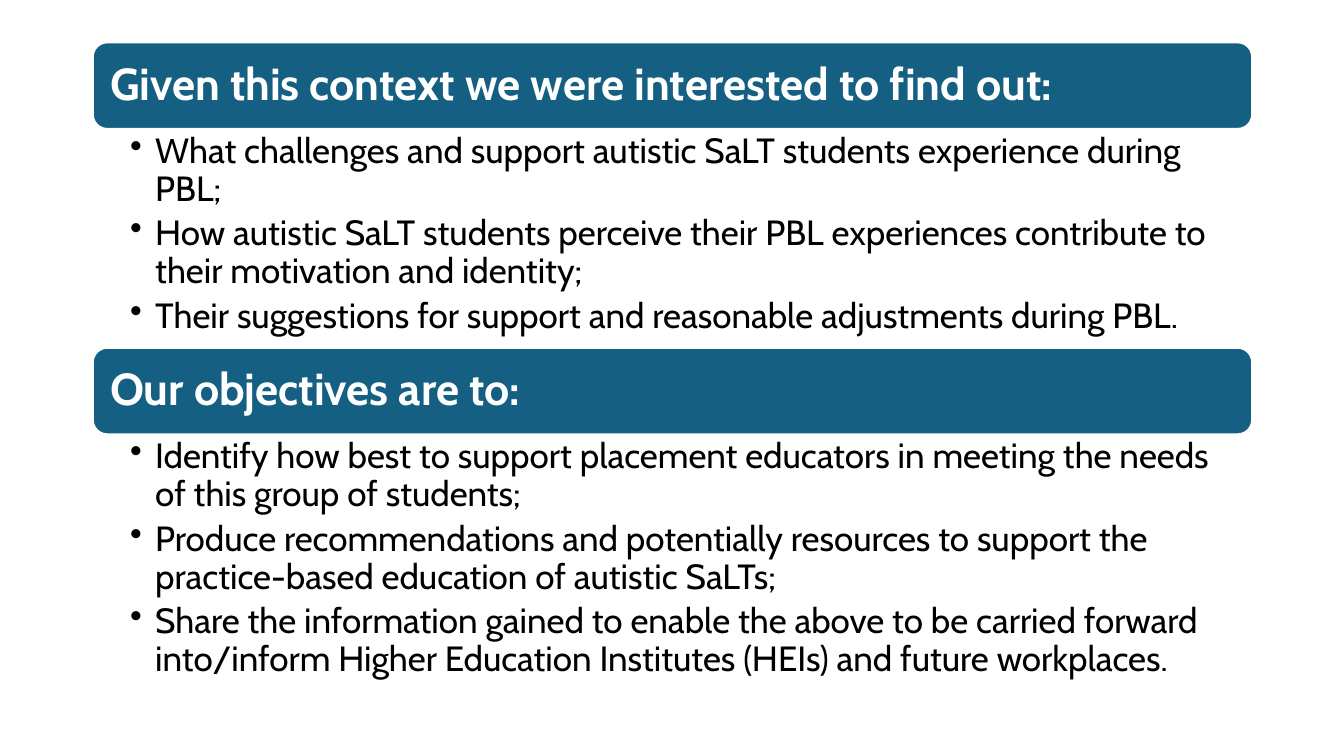
from pptx import Presentation
from pptx.dml.color import RGBColor
from pptx.enum import shapes, text
from pptx.oxml import ns
from pptx.util import Inches, Pt
from lxml import etree

LEFT, WIDTH, BAR = 0.92, 11.5, 0.86

# Heading, top of bar, height of list, list items
parts = [
    ("Given this context we were interested to find out:", 0.42, 2.17, [
        "What challenges and support autistic SaLT students experience during PBL;",
        "How autistic SaLT students perceive their PBL experiences contribute to "
        "their motivation and identity;",
        "Their suggestions for support and reasonable adjustments during PBL.",
    ]),
    ("Our objectives are to:", 3.45, 2.61, [
        "Identify how best to support placement educators in meeting the needs "
        "of this group of students;",
        "Produce recommendations and potentially resources to support the "
        "practice-based education of autistic SaLTs;",
        "Share the information gained to enable the above to be carried forward "
        "into/inform Higher Education Institutes (HEIs) and future workplaces.",
    ]),
]


def color(code):
    return RGBColor.from_string(code)


def write(para, words, size, code, bold=False):
    para.alignment = text.PP_ALIGN.LEFT
    para.line_spacing = 0.9
    run = para.add_run()
    run.text = words
    run.font.name = "Cabin"
    run.font.size = Pt(size)
    run.font.bold = bold
    run.font.color.rgb = color(code)


deck = Presentation()
deck.slide_width, deck.slide_height = Inches(13.33), Inches(7.5)
slide = deck.slides.add_slide(deck.slide_layouts[6])

for title, top, height, items in parts:
    # Heading bar
    bar = slide.shapes.add_shape(
        shapes.MSO_SHAPE.ROUNDED_RECTANGLE,
        Inches(LEFT), Inches(top), Inches(WIDTH), Inches(BAR))
    bar.shadow.inherit = False
    bar.fill.solid()
    bar.fill.fore_color.rgb = color("156082")
    bar.line.color.rgb = color("FFFFFF")
    bar.line.width = Pt(1.5)
    frame = bar.text_frame
    frame.word_wrap = True
    frame.vertical_anchor = text.MSO_ANCHOR.MIDDLE
    frame.margin_left = frame.margin_right = Inches(0.13)
    frame.margin_top = frame.margin_bottom = Inches(0.13)
    write(frame.paragraphs[0], title, 32, "FFFFFF", True)

    # Bulleted list
    box = slide.shapes.add_textbox(
        Inches(LEFT), Inches(top + BAR), Inches(WIDTH), Inches(height))
    frame = box.text_frame
    frame.word_wrap = True
    frame.margin_left, frame.margin_right = Inches(0.37), Inches(0.25)
    frame.margin_top = frame.margin_bottom = Inches(0.04)
    for i, item in enumerate(items):
        para = frame.add_paragraph() if i else frame.paragraphs[0]
        props = para._p.get_or_add_pPr()
        props.set("marL", str(Inches(0.25)))
        props.set("indent", str(Inches(-0.25)))
        etree.SubElement(props, ns.qn("a:buChar")).set("char", "•")
        para.space_after = Pt(5)
        write(para, item, 25, "000000")

deck.save("out.pptx")
